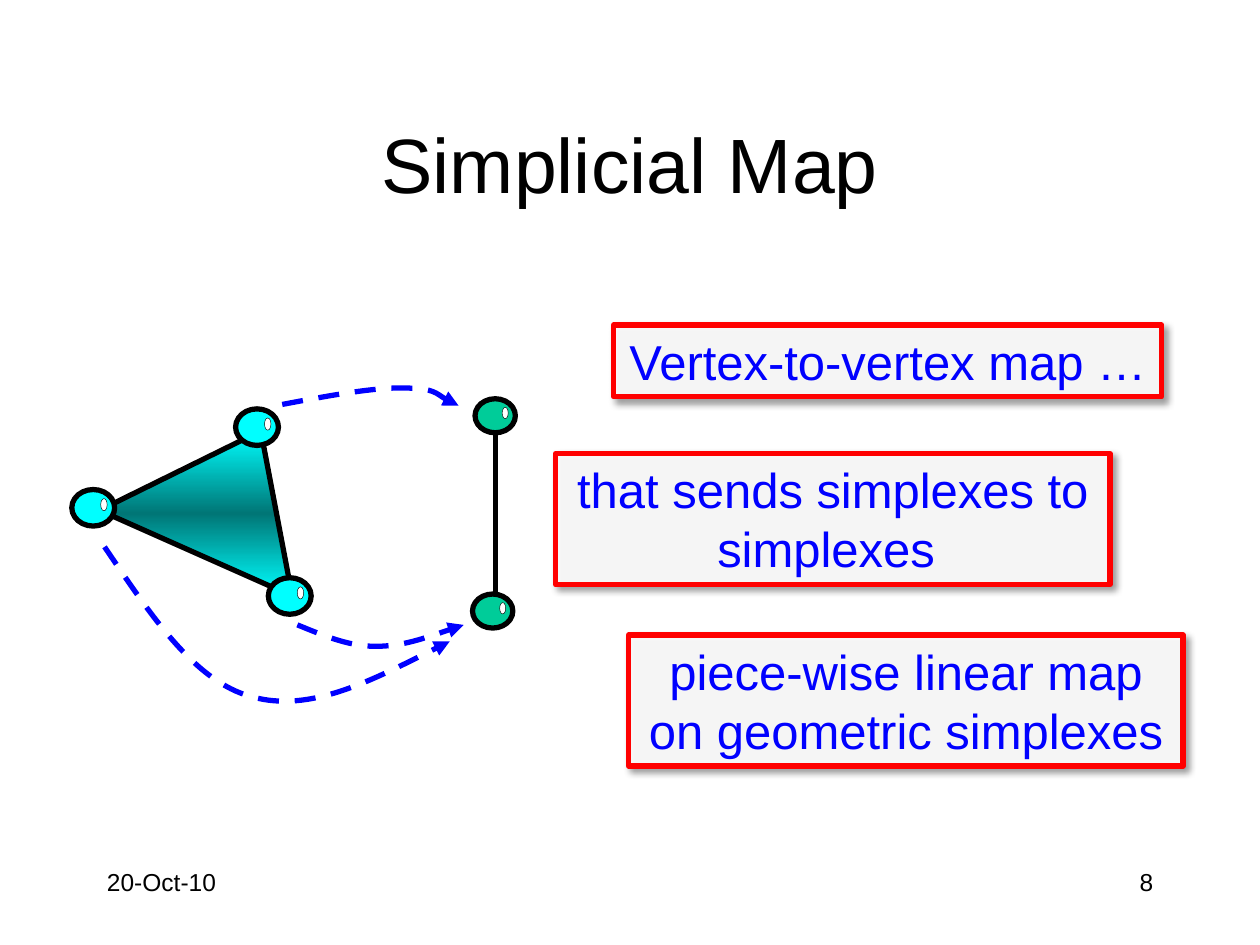
from dataclasses import dataclass

from lxml.etree import SubElement
from pptx import Presentation
from pptx.dml.color import RGBColor
from pptx.enum.dml import MSO_LINE_DASH_STYLE as Dash
from pptx.enum.shapes import MSO_CONNECTOR as Connector, MSO_SHAPE as Preset
from pptx.enum.text import MSO_ANCHOR as Anchor, PP_ALIGN as Align
from pptx.oxml import parse_xml
from pptx.oxml.ns import nsdecls, qn
from pptx.util import Emu, Inches, Pt

Point = tuple[float, float]


@dataclass(frozen=True)
class Theme:
    font: str = "Arial"
    title_size: int = 44
    note_size: int = 28
    footer_size: int = 14
    stroke: float = 3
    hairline: float = 0.25
    ink: str = "000000"
    paper: str = "FFFFFF"
    blue: str = "0000FF"
    red: str = "FF0000"
    source: str = "00FFFF"
    source_dark: str = "007676"
    target: str = "00CC99"


@dataclass(frozen=True)
class Vertex:
    center: Point
    size: Point
    color: str


@dataclass(frozen=True)
class Note:
    text: str
    box: tuple[float, float, float, float]
    wrap: bool = True


THEME = Theme()
COLUMNS, ROWS = 10, 7.5

prs = Presentation()
prs.slide_width, prs.slide_height = Inches(10), Inches(7.5)
slide = prs.slides.add_slide(prs.slide_layouts[5])
shapes = slide.shapes


# Grid and formatting helpers
def col(count: float) -> Emu:
    return Emu(round(prs.slide_width * count / COLUMNS))


def row(count: float) -> Emu:
    return Emu(round(prs.slide_height * count / ROWS))


def place(left: float, top: float, width: float, height: float) -> tuple[Emu, ...]:
    return col(left), row(top), col(width), row(height)


def rgb(color: str) -> RGBColor:
    return RGBColor.from_string(color)


def fill(shape, color: str) -> None:
    shape.fill.solid()
    shape.fill.fore_color.rgb = rgb(color)


def outline(shape, color: str, width: float = THEME.stroke) -> None:
    shape.line.color.rgb = rgb(color)
    shape.line.width = Pt(width)


def write(shape, text: str, size: int, color: str, align: Align,
          anchor: Anchor = Anchor.TOP, wrap: bool = True) -> None:
    frame = shape.text_frame
    frame.text = text
    for name, value in {"word_wrap": wrap, "vertical_anchor": anchor}.items():
        setattr(frame, name, value)
    paragraph = frame.paragraphs[0]
    paragraph.alignment = align
    font = paragraph.runs[0].font
    for name, value in {"name": THEME.font, "size": Pt(size)}.items():
        setattr(font, name, value)
    font.color.rgb = rgb(color)


# Diagram parts
def draw_polyline(points: list[Point], close: bool):
    (x, y), *rest = points
    builder = shapes.build_freeform(col(x), row(y))
    builder.add_line_segments([(col(px), row(py)) for px, py in rest], close=close)
    shape = builder.convert_to_shape()
    shape.shadow.inherit = False
    return shape


def draw_simplex(corners: list[Point]) -> None:
    simplex = draw_polyline(corners, close=True)
    simplex.fill.background()
    stops = ((0, THEME.source), (50, THEME.source_dark), (100, THEME.source))
    stop_xml = "".join(f'<a:gs pos="{share * 1000}"><a:srgbClr val="{color}"/></a:gs>'
                       for share, color in stops)
    gradient = parse_xml(f'<a:gradFill {nsdecls("a")} rotWithShape="1"><a:gsLst>{stop_xml}'
                         '</a:gsLst><a:lin ang="5400000" scaled="1"/></a:gradFill>')
    properties = simplex.element.spPr
    properties.replace(properties.find(qn("a:noFill")), gradient)
    outline(simplex, THEME.ink)


def draw_ellipse(center: Point, size: Point, color: str, width: float) -> None:
    (x, y), (w, h) = center, size
    ellipse = shapes.add_shape(Preset.OVAL, *place(x - w / 2, y - h / 2, w, h))
    ellipse.shadow.inherit = False
    fill(ellipse, color)
    outline(ellipse, THEME.ink, width)


def draw_vertex(vertex: Vertex) -> None:
    (x, y), (w, h) = vertex.center, vertex.size
    draw_ellipse(vertex.center, vertex.size, vertex.color, THEME.stroke)
    draw_ellipse((x + w / 4, y - h / 12), (w * 0.15, h / 3), THEME.paper, THEME.hairline)


def draw_edge(start: Point, end: Point) -> None:
    edge = shapes.add_connector(Connector.STRAIGHT, col(start[0]), row(start[1]),
                                col(end[0]), row(end[1]))
    outline(edge, THEME.ink)
    SubElement(edge.element.spPr, qn("a:effectLst"))


def draw_mapping(points: list[Point]) -> None:
    """Dashed arrow: a start point, then three Bezier points per curve."""
    arrow = draw_polyline(points, close=False)
    segments = list(arrow.element.iter(qn("a:lnTo")))
    for first in range(0, len(segments), 3):
        trio = segments[first:first + 3]
        curve = SubElement(trio[0].getparent(), qn("a:cubicBezTo"))
        for segment in trio:
            curve.append(segment[0])
            segment.getparent().remove(segment)
    arrow.fill.background()
    outline(arrow, THEME.blue)
    arrow.line.dash_style = Dash.DASH
    SubElement(arrow.element.spPr.find(qn("a:ln")), qn("a:tailEnd"), type="triangle")


def draw_note(note: Note) -> None:
    box = shapes.add_shape(Preset.RECTANGLE, *place(*note.box))
    fill(box, THEME.paper)
    properties = box.element.spPr
    paint = properties.find(qn("a:solidFill"))[0]
    SubElement(paint, qn("a:alpha"), val="90000")
    outline(box, THEME.red)
    box.shadow.inherit = False
    properties.find(qn("a:effectLst")).append(parse_xml(
        f'<a:outerShdw {nsdecls("a")} blurRad="{Pt(4)}" dist="{Pt(3)}" dir="2700000" '
        f'algn="tl" rotWithShape="0"><a:srgbClr val="{THEME.ink}">'
        '<a:alpha val="40000"/></a:srgbClr></a:outerShdw>'))
    write(box, note.text, THEME.note_size, THEME.blue, Align.CENTER, wrap=note.wrap)


# Title and footer
title = shapes.title
title.left, title.top, title.width, title.height = place(0.75, 0.67, 8.5, 1.25)
write(title, "Simplicial Map", THEME.title_size, THEME.ink, Align.CENTER, Anchor.MIDDLE)
for text, left, align in (("20-Oct-10", 0.75, Align.LEFT), ("8", 7.17, Align.RIGHT)):
    footer = shapes.add_textbox(*place(left, 6.83, 2.08, 0.5))
    write(footer, text, THEME.footer_size, THEME.ink, align)

# Source triangle and target edge
SOURCE_SIZE, TARGET_SIZE = (0.34, 0.29), (0.32, 0.27)
draw_simplex([(0.79, 4.05), (2.07, 3.42), (2.32, 4.73)])
for center in ((0.74, 4.03), (2.04, 3.39), (2.3, 4.73)):
    draw_vertex(Vertex(center, SOURCE_SIZE, THEME.source))
draw_edge((3.93, 4.94), (3.93, 3.34))
for center in ((3.93, 3.3), (3.91, 4.85)):
    draw_vertex(Vertex(center, TARGET_SIZE, THEME.target))

# Vertex-to-vertex arrows
MAPPINGS = [
    [(2.24, 3.21), (2.61, 3.14), (2.99, 3.07), (3.22, 3.08),
     (3.45, 3.08), (3.57, 3.2), (3.64, 3.22)],
    [(2.36, 4.96), (2.56, 5.04), (2.76, 5.13), (2.98, 5.13),
     (3.2, 5.13), (3.44, 5.04), (3.68, 4.96)],
    [(0.83, 4.34), (1.19, 4.87), (1.54, 5.41), (2, 5.53),
     (2.46, 5.66), (3.01, 5.37), (3.57, 5.09)],
]
for mapping in MAPPINGS:
    draw_mapping(mapping)

# Notes
NOTES = [
    Note("Vertex-to-vertex map …", (4.87, 2.58, 4.35, 0.57), wrap=False),
    Note("that sends simplexes to simplexes ", (4.41, 3.6, 4.4, 1.04)),
    Note("piece-wise linear map on geometric simplexes", (4.99, 5.04, 4.4, 1.04)),
]
for note in NOTES:
    draw_note(note)

prs.save("out.pptx")
